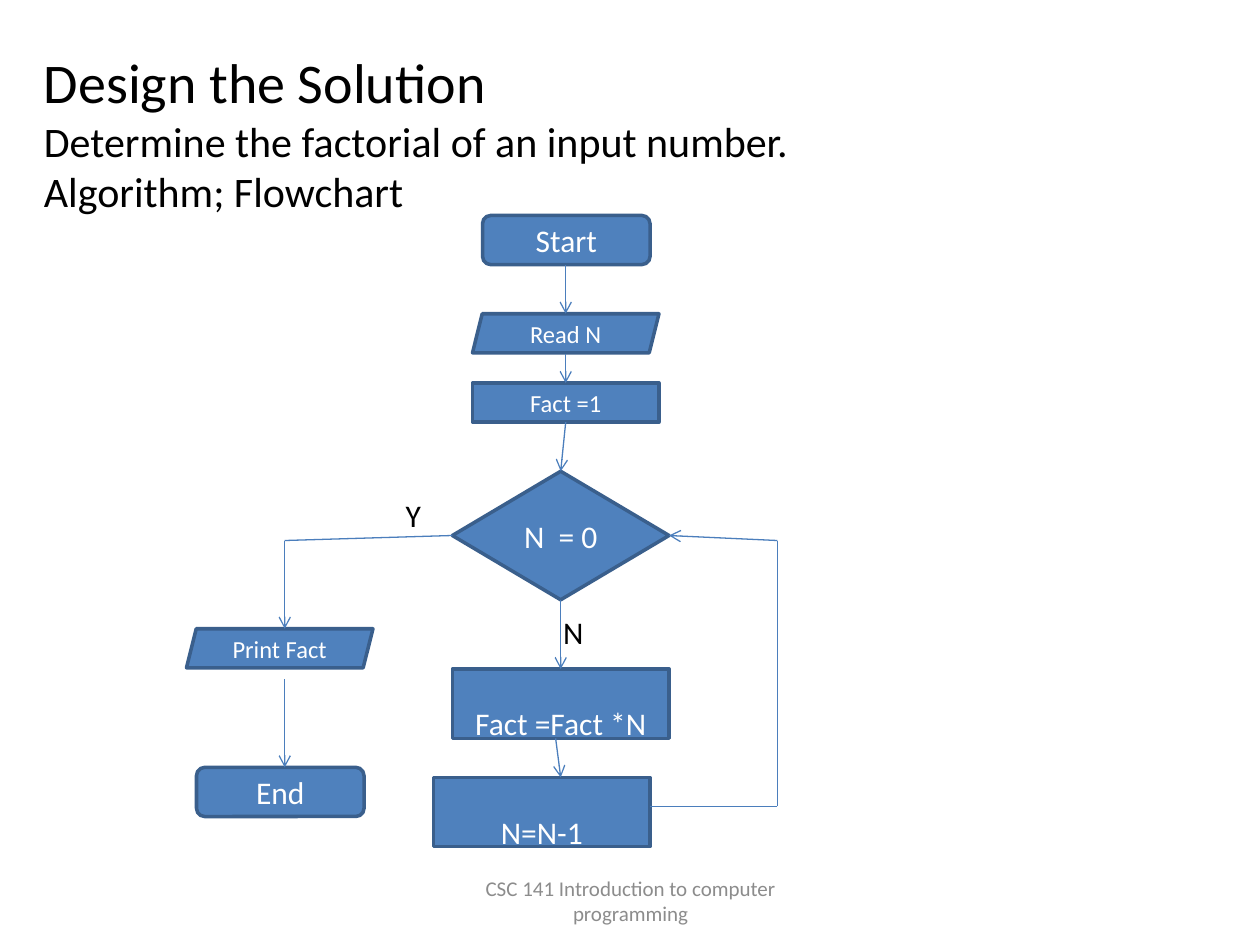
from dataclasses import dataclass
from lxml.etree import SubElement
from pptx import Presentation
from pptx.dml.color import RGBColor
from pptx.enum.shapes import MSO_CONNECTOR, MSO_SHAPE
from pptx.enum.text import MSO_ANCHOR, PP_ALIGN
from pptx.oxml.ns import qn
from pptx.util import Pt

EMU_PER_PX = 9144


def px(n):
    return n * EMU_PER_PX


def color(value):
    return RGBColor.from_string(value)


def apply(obj, formats):
    for name, value in formats.items():
        setattr(obj, name, value)


@dataclass
class Flowchart:
    s: object
    font: str = "Calibri"
    fill: str = "4F81BD"
    border: str = "3A5F8C"
    arrow: str = "4B7EBC"

    def set_lines(self, tf, lines, fg, align=PP_ALIGN.LEFT, **frame):
        apply(tf, {"word_wrap": True, **frame})
        for i, (text, size) in enumerate(lines):
            p = tf.add_paragraph() if i else tf.paragraphs[0]
            p.alignment = align
            r = p.add_run()
            r.text = text
            apply(r.font, {"name": self.font, "size": Pt(size)})
            r.font.color.rgb = color(fg)

    def text(self, box, lines, fg="000000", **frame):
        sp = self.s.shapes.add_textbox(*map(px, box))
        self.set_lines(sp.text_frame, lines, fg, **frame)

    def node(self, kind, box, label, size=18, **frame):
        sp = self.s.shapes.add_shape(kind, *map(px, box))
        sp.shadow.inherit = False
        sp.fill.solid()
        sp.fill.fore_color.rgb = color(self.fill)
        sp.line.color.rgb = color(self.border)
        sp.line.width = Pt(2)
        style = {"vertical_anchor": MSO_ANCHOR.MIDDLE, **frame}
        self.set_lines(sp.text_frame, [(label, size)], "FFFFFF", PP_ALIGN.CENTER, **style)

    def flow(self, *points):
        for start, end in zip(points, points[1:]):
            self.line(start, end, end == points[-1])

    def line(self, start, end, head):
        cx = self.s.shapes.add_connector(MSO_CONNECTOR.STRAIGHT, *map(px, start + end))
        cx.line.color.rgb = color(self.arrow)
        cx.line.width = Pt(0.75)
        props = cx.element.spPr
        if head:
            SubElement(props.find(qn("a:ln")), qn("a:tailEnd"), type="arrow")
        SubElement(props, qn("a:effectLst"))


def main():
    prs = Presentation()
    apply(prs, {"slide_width": px(1000), "slide_height": px(750)})
    chart = Flowchart(prs.slides.add_slide(prs.slide_layouts[6]))

    terminal = MSO_SHAPE.ROUNDED_RECTANGLE
    data = MSO_SHAPE.PARALLELOGRAM
    process = MSO_SHAPE.RECTANGLE
    low_label = {"vertical_anchor": MSO_ANCHOR.TOP, "margin_top": px(28)}

    chart.node(terminal, (383, 171, 133, 39), "Start")
    chart.node(data, (375, 249, 148, 31), "Read N", 14)
    chart.node(process, (375, 304, 148, 31), "Fact =1", 14)
    chart.node(MSO_SHAPE.FLOWCHART_DECISION, (359, 374, 172, 102), "N  = 0")
    chart.node(process, (359, 531, 172, 55), "Fact =Fact *N", **low_label)
    chart.node(process, (344, 617, 172, 55), "N=N-1", **low_label)
    chart.node(data, (148, 499, 148, 31), "Print Fact", 14)
    chart.node(terminal, (156, 609, 133, 39), "End")

    chart.flow((449, 210), (449, 249))
    chart.flow((449, 281), (449, 304))
    chart.flow((449, 335), (445, 374))
    chart.flow((445, 476), (445, 531))
    chart.flow((441, 586), (445, 617))
    chart.flow((516, 640), (617, 640), (617, 429), (531, 425))
    chart.flow((359, 425), (226, 429), (226, 499))
    chart.flow((226, 539), (226, 609))

    chart.text((312, 389, 78, 40), [("Y", 18)])
    chart.text((437, 482, 78, 40), [("N", 18)])
    chart.text((25, 33, 908, 125), [
        ("Design the Solution", 32),
        ("Determine the factorial of an input number.", 24),
        ("Algorithm; Flowchart", 24),
    ])
    chart.text((342, 695, 317, 40),
               [("CSC 141 Introduction to computer programming", 12)], "8C8C8C",
               align=PP_ALIGN.CENTER, vertical_anchor=MSO_ANCHOR.MIDDLE)
    prs.save("out.pptx")


if __name__ == "__main__":
    main()
